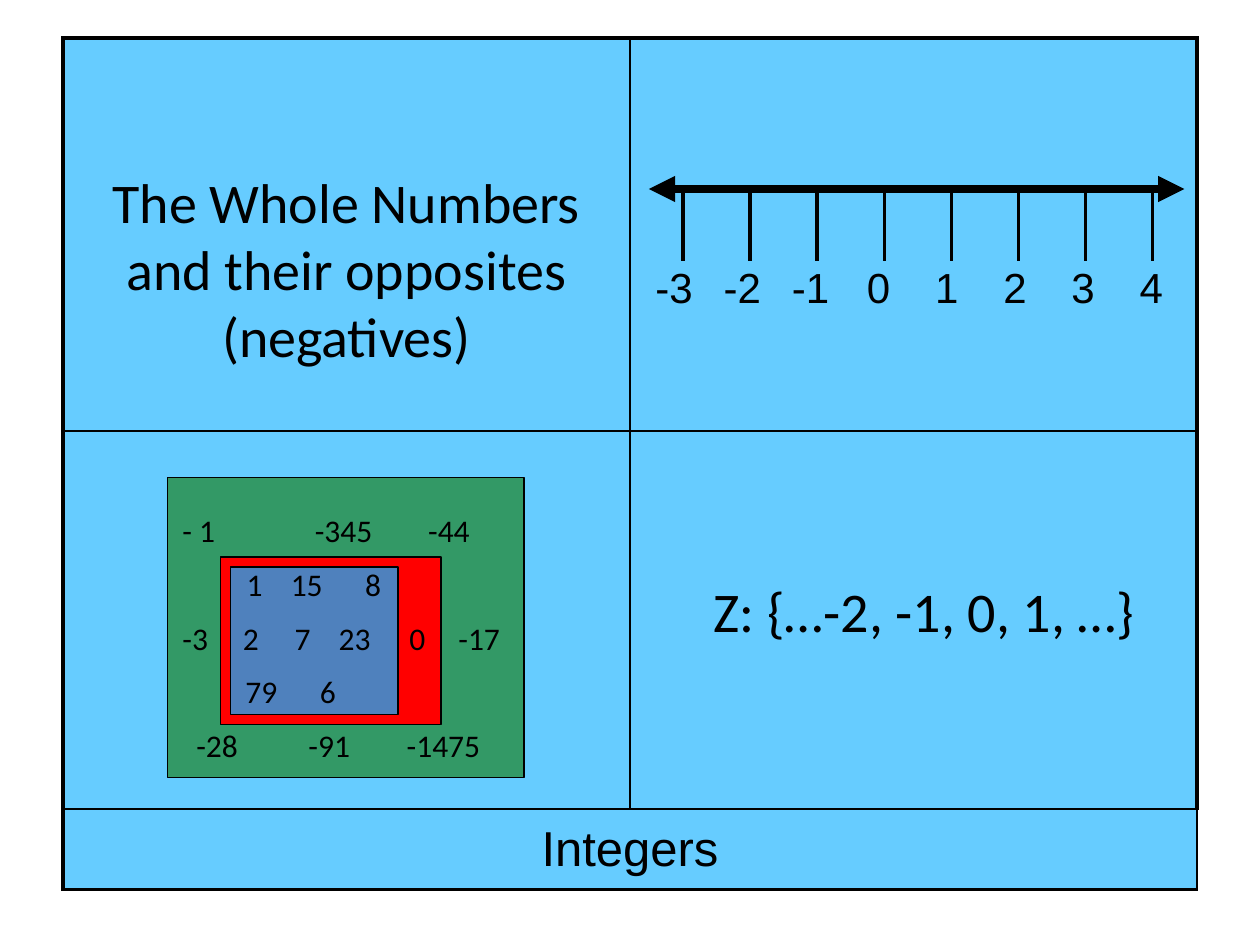
from lxml.etree import SubElement
from pptx import Presentation
from pptx.dml.color import RGBColor
from pptx.enum.shapes import MSO_CONNECTOR, MSO_SHAPE
from pptx.enum.text import MSO_ANCHOR, PP_ALIGN
from pptx.oxml.ns import qn
from pptx.util import Inches, Pt

BLACK = RGBColor(0x00, 0x00, 0x00)
SKY = RGBColor(0x66, 0xCC, 0xFF)
GREEN = RGBColor(0x33, 0x99, 0x66)
RED = RGBColor(0xFF, 0x00, 0x00)
BLUE = RGBColor(0x4F, 0x81, 0xBD)

OUTER, INNER = 2.25, 1
LABELS = ["-3", "-2", "-1", "0", "1", "2", "3", "4"]
NESTED_SETS = [
    (GREEN, 1.33, 3.79, 2.83, 2.38),
    (RED, 1.75, 4.42, 1.75, 1.33),
    (BLUE, 1.83, 4.5, 1.33, 1.17),
]
MEMBER_ROWS = [
    [("- 1", 0), ("-345", 1.05), ("-44", 1.95)],
    [("1", 0.51), ("15", 0.86), ("8", 1.45)],
    [("-3", 0), ("2", 0.48), ("7", 0.89), ("23", 1.24), ("0", 1.8), ("-17", 2.19)],
    [("79", 0.5), ("6", 1.09)],
    [("-28", 0.11), ("-91", 1), ("-1475", 1.78)],
]


def style_paragraph(paragraph, text, font_name, size, alignment=PP_ALIGN.CENTER):
    """Write text into a paragraph with one font."""
    paragraph.text = text
    paragraph.alignment = alignment
    paragraph.font.name = font_name
    paragraph.font.size = Pt(size)
    paragraph.font.color.rgb = BLACK


def set_borders(cell, left=0, right=0, top=0, bottom=0):
    """Draw black cell borders of the given widths, or none where zero."""
    properties = cell._tc.get_or_add_tcPr()
    for side, width in (("L", left), ("R", right), ("T", top), ("B", bottom)):
        line = SubElement(properties, qn(f"a:ln{side}"), w=str(Pt(width)))
        if width:
            fill = SubElement(line, qn("a:solidFill"))
            SubElement(fill, qn("a:srgbClr"), val=str(BLACK))
        else:
            SubElement(line, qn("a:noFill"))


def add_plain_table(slide, left, top, column_widths, row_heights):
    """Add a table without header or banding."""
    table = slide.shapes.add_table(
        len(row_heights), len(column_widths), Inches(left), Inches(top),
        Inches(sum(column_widths)), Inches(sum(row_heights))).table
    table.first_row = table.horz_banding = False
    for column, width in zip(table.columns, column_widths):
        column.width = Inches(width)
    for row, height in zip(table.rows, row_heights):
        row.height = Inches(height)
    return table


def add_frame(slide):
    """Add the four panels and the term beneath them."""
    table = add_plain_table(slide, 0.5, 0.3, [4.5] * 2, [3.12, 3, 0.64])
    for row in range(3):
        for column in range(2):
            cell = table.cell(row, column)
            set_borders(cell,
                        left=INNER if column else OUTER,
                        right=OUTER if column else INNER,
                        top=INNER if row else OUTER,
                        bottom=OUTER if row == 2 else INNER)
            cell.fill.solid()
            cell.fill.fore_color.rgb = SKY
    term = table.cell(2, 0)
    term.merge(table.cell(2, 1))
    term.vertical_anchor = MSO_ANCHOR.MIDDLE
    style_paragraph(term.text_frame.paragraphs[0], "Integers", "Arial", 28)


def add_text(shapes, left, top, width, height):
    """Add a wrapping text box and return its text frame."""
    box = shapes.add_textbox(Inches(left), Inches(top), Inches(width), Inches(height))
    box.text_frame.word_wrap = True
    return box.text_frame


def add_statement(slide, text, *bounds):
    """Add a large centred statement."""
    frame = add_text(slide.shapes, *bounds)
    style_paragraph(frame.paragraphs[0], text, "Calibri", 32)


def add_number_line(slide):
    """Add the ticks, labels and double-headed arrow."""
    intervals = len(LABELS) - 1
    ticks = add_plain_table(slide, 5.42, 1.5, [3.73 / intervals] * intervals, [0.57])
    for cell in ticks.iter_cells():
        set_borders(cell, left=OUTER, right=OUTER, top=OUTER)
        cell.fill.background()

    labels = add_plain_table(slide, 5.08, 2, [4.33 / len(LABELS)] * len(LABELS), [0.58])
    for cell, label in zip(labels.iter_cells(), LABELS):
        set_borders(cell)
        cell.fill.background()
        cell.vertical_anchor = MSO_ANCHOR.MIDDLE
        style_paragraph(cell.text_frame.paragraphs[0], label, "Arial", 24)

    arrow = slide.shapes.add_connector(
        MSO_CONNECTOR.STRAIGHT, Inches(5.15), Inches(1.5), Inches(9.4), Inches(1.5))
    arrow.line.color.rgb = BLACK
    arrow.line.width = Pt(5)
    line = arrow.line._get_or_add_ln()
    for end in ("headEnd", "tailEnd"):
        SubElement(line, qn(f"a:{end}"), type="triangle")
    SubElement(arrow._element.spPr, qn("a:effectLst"))


def add_member_row(paragraph, members):
    """Write one row of numbers at its tab stops."""
    text = "".join(("\t" if position else "") + number for number, position in members)
    style_paragraph(paragraph, text, "Calibri", 18, PP_ALIGN.LEFT)
    properties = paragraph._p.get_or_add_pPr()
    stops = properties.makeelement(qn("a:tabLst"), {})
    for _, position in members:
        if position:
            SubElement(stops, qn("a:tab"), pos=str(Inches(position)), algn="l")
    properties.find(qn("a:defRPr")).addprevious(stops)


def add_set_diagram(slide):
    """Add the nested number sets with their members."""
    shapes = slide.shapes.add_group_shape().shapes
    for color, *bounds in NESTED_SETS:
        rectangle = shapes.add_shape(MSO_SHAPE.RECTANGLE, *map(Inches, bounds))
        rectangle.shadow.inherit = False
        rectangle.fill.solid()
        rectangle.fill.fore_color.rgb = color
        rectangle.line.color.rgb = BLACK
        rectangle.line.width = Pt(0.75)
    frame = add_text(shapes, 1.35, 4.01, 3, 2.22)
    for index, members in enumerate(MEMBER_ROWS):
        paragraph = frame.add_paragraph() if index else frame.paragraphs[0]
        if index:
            paragraph.space_before = Pt(9)
        add_member_row(paragraph, members)


def main():
    """Build and save the slide."""
    presentation = Presentation()
    presentation.slide_width, presentation.slide_height = Inches(10), Inches(7.5)
    slide = presentation.slides.add_slide(presentation.slide_layouts[6])
    add_frame(slide)
    add_statement(slide, "The Whole Numbers and their opposites (negatives)",
                  0.5, 1.28, 4.5, 1.72)
    add_statement(slide, "Z: {…-2, -1, 0, 1, …}", 5, 4.53, 4.67, 0.63)
    add_number_line(slide)
    add_set_diagram(slide)
    presentation.save("out.pptx")


if __name__ == "__main__":
    main()
